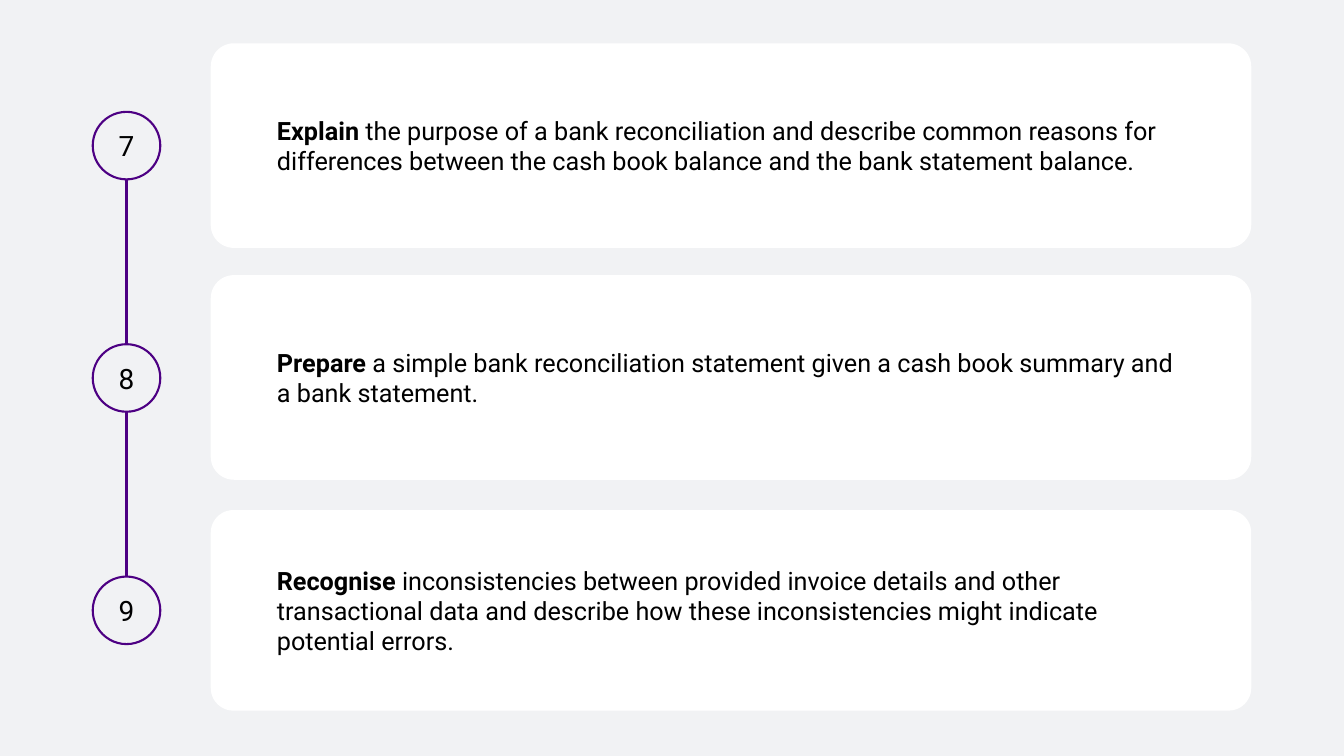
from lxml.etree import SubElement
from pptx import Presentation
from pptx.dml.color import RGBColor
from pptx.enum.shapes import MSO_CONNECTOR, MSO_SHAPE
from pptx.enum.text import MSO_ANCHOR, PP_ALIGN
from pptx.oxml.ns import qn
from pptx.util import Inches, Pt

# number, verb, rest of the outcome, card top, card height
OUTCOMES = [
    ("7", "Explain", " the purpose of a bank reconciliation and describe common reasons "
     "for differences between the cash book balance and the bank statement balance.",
     0.43, 2.03),
    ("8", "Prepare", " a simple bank reconciliation statement given a cash book summary "
     "and a bank statement.", 2.73, 2.03),
    ("9", "Recognise", " inconsistencies between provided invoice details and other "
     "transactional data and describe how these inconsistencies might indicate "
     "potential errors.", 5.06, 1.99),
]
COLORS = {"back": "F1F2F4", "card": "FFFFFF", "ring": "4D0083", "text": "000000"}
FONT = "Roboto"
RING_LEFT, RING_SIZE = 0.92, 0.67
RING_FIRST, RING_LAST = 1.11, 5.72
RING_STEP = (RING_LAST - RING_FIRST) / (len(OUTCOMES) - 1)
CARD_LEFT, CARD_WIDTH, CARD_ROUND, CARD_PAD = 2.09, 10.32, 0.113, 0.59
LINE_WIDTH = 1.5


def color(name):
    return RGBColor.from_string(COLORS[name])


def draw_line(line):
    line.color.rgb = color("ring")
    line.width = Pt(LINE_WIDTH)


def add_box(slide, kind, place, fill):
    box = slide.shapes.add_shape(kind, *map(Inches, place))
    box.shadow.inherit = False
    box.fill.solid()
    box.fill.fore_color.rgb = color(fill)
    box.text_frame.word_wrap = True
    box.text_frame.vertical_anchor = MSO_ANCHOR.MIDDLE
    return box


def write(box, align, size, *parts):
    """Fill the first paragraph with (text, bold) parts."""
    para = box.text_frame.paragraphs[0]
    para.alignment = align
    for text, bold in parts:
        run = para.add_run()
        run.text = text
        run.font.color.rgb = color("text")
        for key, value in {"name": FONT, "size": Pt(size), "bold": bold}.items():
            setattr(run.font, key, value)


def add_stem(slide):
    mid = RING_LEFT + RING_SIZE / 2
    ends = (mid, RING_FIRST + RING_SIZE / 2, mid, RING_LAST + RING_SIZE / 2)
    stem = slide.shapes.add_connector(MSO_CONNECTOR.STRAIGHT, *map(Inches, ends))
    draw_line(stem.line)
    SubElement(stem._element.spPr, qn("a:effectLst"))


def add_ring(slide, index, number):
    top = RING_FIRST + index * RING_STEP
    ring = add_box(slide, MSO_SHAPE.OVAL, (RING_LEFT, top, RING_SIZE, RING_SIZE), "back")
    draw_line(ring.line)
    write(ring, PP_ALIGN.CENTER, 20, (number, False))


def add_card(slide, top, height, verb, rest):
    place = (CARD_LEFT, top, CARD_WIDTH, height)
    card = add_box(slide, MSO_SHAPE.ROUNDED_RECTANGLE, place, "card")
    card.adjustments[0] = CARD_ROUND
    card.line.fill.background()
    for side in ("left", "top", "right", "bottom"):
        setattr(card.text_frame, f"margin_{side}", Inches(CARD_PAD))
    write(card, PP_ALIGN.LEFT, 18, (verb, True), (rest, False))


def main():
    deck = Presentation()
    deck.slide_width, deck.slide_height = Inches(13.33), Inches(7.5)
    slide = deck.slides.add_slide(deck.slide_layouts[6])
    slide.background.fill.solid()
    slide.background.fill.fore_color.rgb = color("back")
    add_stem(slide)
    for index, (number, verb, rest, top, height) in enumerate(OUTCOMES):
        add_ring(slide, index, number)
        add_card(slide, top, height, verb, rest)
    deck.save("out.pptx")


if __name__ == "__main__":
    main()
